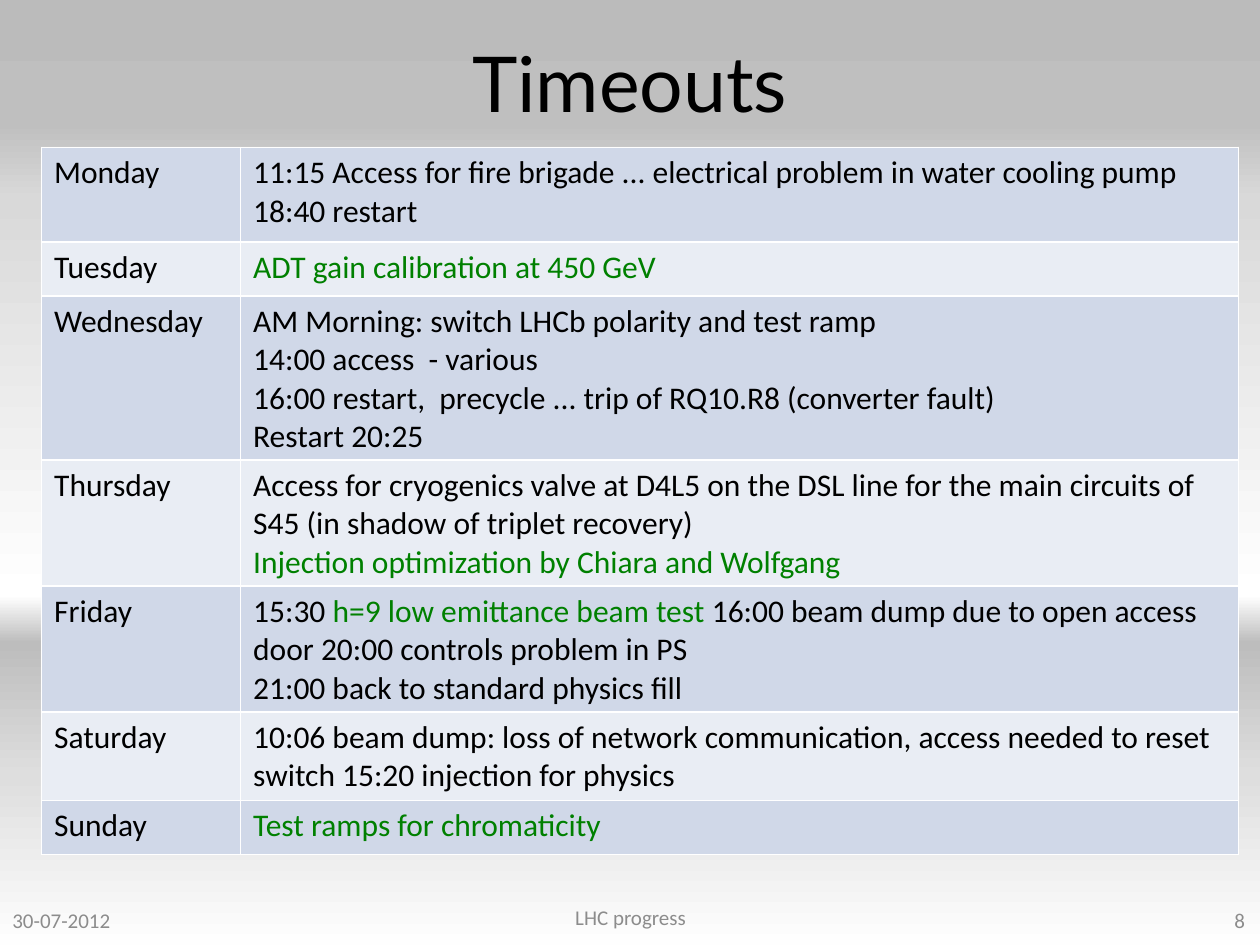
import pptx
import pptx.dml.color
import pptx.enum.text
import pptx.oxml.ns
import pptx.util
from lxml import etree

RGBColor = pptx.dml.color.RGBColor
ALIGN = pptx.enum.text.PP_ALIGN
MIDDLE = pptx.enum.text.MSO_ANCHOR.MIDDLE
qn = pptx.oxml.ns.qn

BLACK = RGBColor(0x00, 0x00, 0x00)
GREEN = RGBColor(0x00, 0x80, 0x00)
GREY = RGBColor(0x8C, 0x8C, 0x8C)
WHITE = RGBColor(0xFF, 0xFF, 0xFF)
ROW_FILLS = [RGBColor(0xD0, 0xD8, 0xE8), RGBColor(0xE9, 0xED, 0xF4)]
GRADIENT = [(0, "BBBBBB"), (13, "BFBFBF"), (21, "D9D9D9"), (63, "FFFFFF"),
            (68, "BDBDBD"), (82, "DEDEDE"), (100, "FEFEFE")]

presentation = pptx.Presentation()
presentation.slide_width = WIDTH = pptx.util.Inches(10)
presentation.slide_height = HEIGHT = pptx.util.Inches(7.5)
slide = presentation.slides.add_slide(presentation.slide_layouts[6])


def write(frame, paragraphs, size=18, font="Calibri", color=BLACK, align=ALIGN.LEFT):
    """Fill a frame; each paragraph is a list of texts or (text, color) pairs."""
    frame.word_wrap = True
    for index, pieces in enumerate(paragraphs):
        paragraph = frame.paragraphs[0] if index == 0 else frame.add_paragraph()
        paragraph.alignment = align
        for piece in pieces:
            text, run_color = (piece, color) if isinstance(piece, str) else piece
            for number, line in enumerate(text.split("\n")):
                if number:
                    paragraph.add_line_break()
                run = paragraph.add_run()
                run.text = line
                run.font.size = pptx.util.Pt(size)
                run.font.name = font
                run.font.color.rgb = run_color


# Background: vertical gradient
background = slide.background.fill
background.gradient()
background.gradient_angle = 270
stops = slide.element.find(".//" + qn("a:gsLst"))
for stop in list(stops):
    stops.remove(stop)
for percent, color in GRADIENT:
    stop = etree.SubElement(stops, qn("a:gs"), pos=str(percent * 1000))
    etree.SubElement(stop, qn("a:srgbClr"), val=color)

# Title and footer, placed by shares of the slide: left, top, width, height
footer = {"size": 12, "color": GREY}
for text, (left, top, width, height), style in [
    ("Timeouts", (0.05, 0.023, 0.9, 0.127),
     {"size": 44, "font": "Lato", "align": ALIGN.CENTER}),
    ("30-07-2012", (0, 0.947, 0.233, 0.053), footer),
    ("LHC progress", (0.342, 0.944, 0.317, 0.053), {**footer, "align": ALIGN.CENTER}),
    ("8", (0.765, 0.947, 0.233, 0.053), {**footer, "align": ALIGN.RIGHT}),
]:
    box = slide.shapes.add_textbox(int(left * WIDTH), int(top * HEIGHT),
                                   int(width * WIDTH), int(height * HEIGHT))
    box.text_frame.vertical_anchor = MIDDLE
    write(box.text_frame, [[text]], **style)

# Table of the week
days = [
    ("Monday", [
        ["11:15 Access for fire brigade ... electrical problem in water cooling pump"],
        ["18:40 restart"]]),
    ("Tuesday", [[("ADT gain calibration at 450 GeV", GREEN)]]),
    ("Wednesday", [
        ["AM Morning: switch LHCb polarity and test ramp"],
        ["14:00 access  - various"],
        ["16:00 restart,  precycle ... trip of RQ10.R8 (converter fault)"],
        ["Restart 20:25"]]),
    ("Thursday", [
        ["Access for cryogenics valve at D4L5 on the DSL line for the main circuits of "
         "S45 (in shadow of triplet recovery)"],
        [("Injection optimization by Chiara and Wolfgang", GREEN)]]),
    ("Friday", [
        ["15:30 ", ("h=9 low emittance beam test ", GREEN),
         "16:00 beam dump due to open access door 20:00 controls problem in PS\n"
         "21:00 back to standard physics fill"]]),
    ("Saturday", [
        ["10:06 beam dump: loss of network communication, access needed to reset "
         "switch 15:20 injection for physics"]]),
    ("Sunday", [[("Test ramps for chromaticity", GREEN)]]),
]
column_widths = [pptx.util.Inches(1.58), pptx.util.Inches(7.92)]
table = slide.shapes.add_table(
    len(days), 2, pptx.util.Inches(0.33), pptx.util.Inches(1.17),
    sum(column_widths), pptx.util.Inches(5.62)).table
table.first_row = table.horz_banding = False
for column, width in zip(table.columns, column_widths):
    column.width = width

for index, (day, events) in enumerate(days):
    # Rows grow with their text; only the first has a taller minimum
    table.rows[index].height = pptx.util.Inches(0.43 if index else 0.75)
    for cell, paragraphs in zip(table.rows[index].cells, ([[day]], events)):
        write(cell.text_frame, paragraphs)
        properties = cell._tc.get_or_add_tcPr()
        for side in ("a:lnL", "a:lnR", "a:lnT", "a:lnB"):
            border = etree.SubElement(properties, qn(side), w=str(pptx.util.Pt(1)))
            solid = etree.SubElement(border, qn("a:solidFill"))
            etree.SubElement(solid, qn("a:srgbClr"), val=str(WHITE))
        cell.fill.solid()
        cell.fill.fore_color.rgb = ROW_FILLS[index % 2]

presentation.save("out.pptx")
